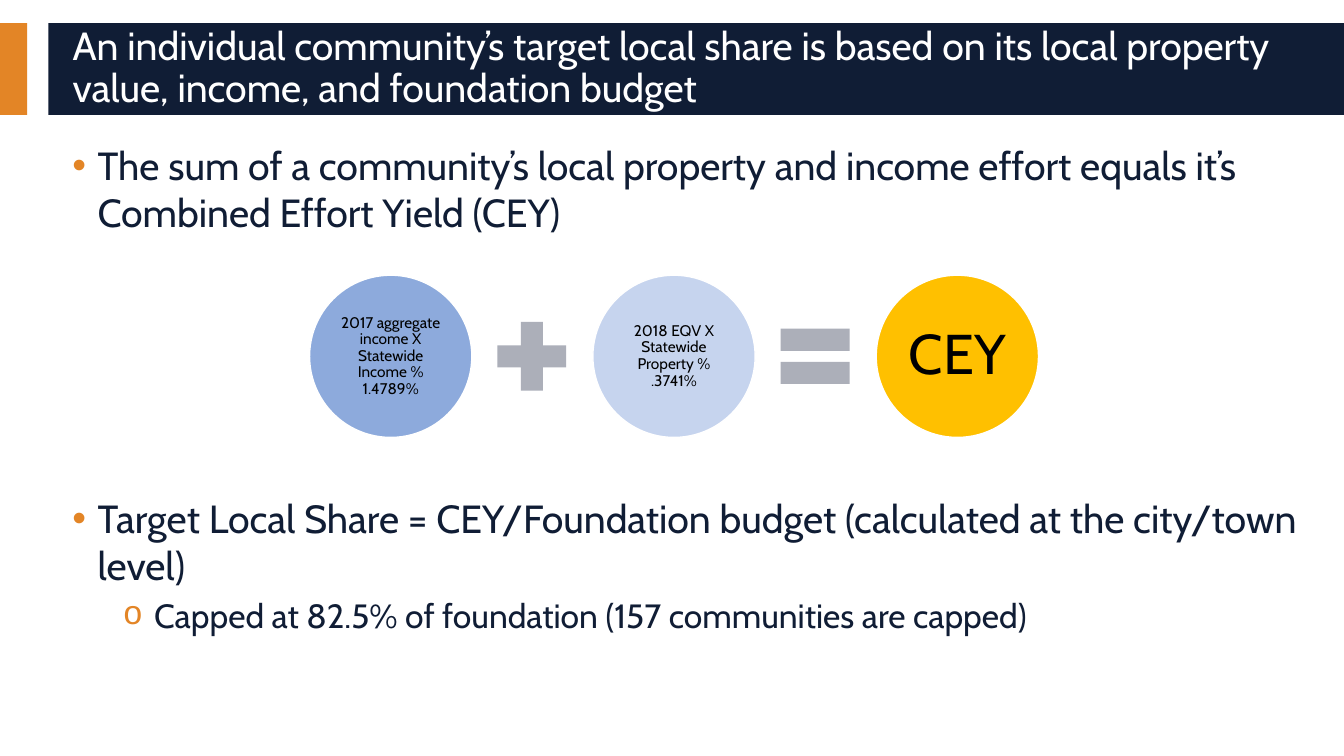
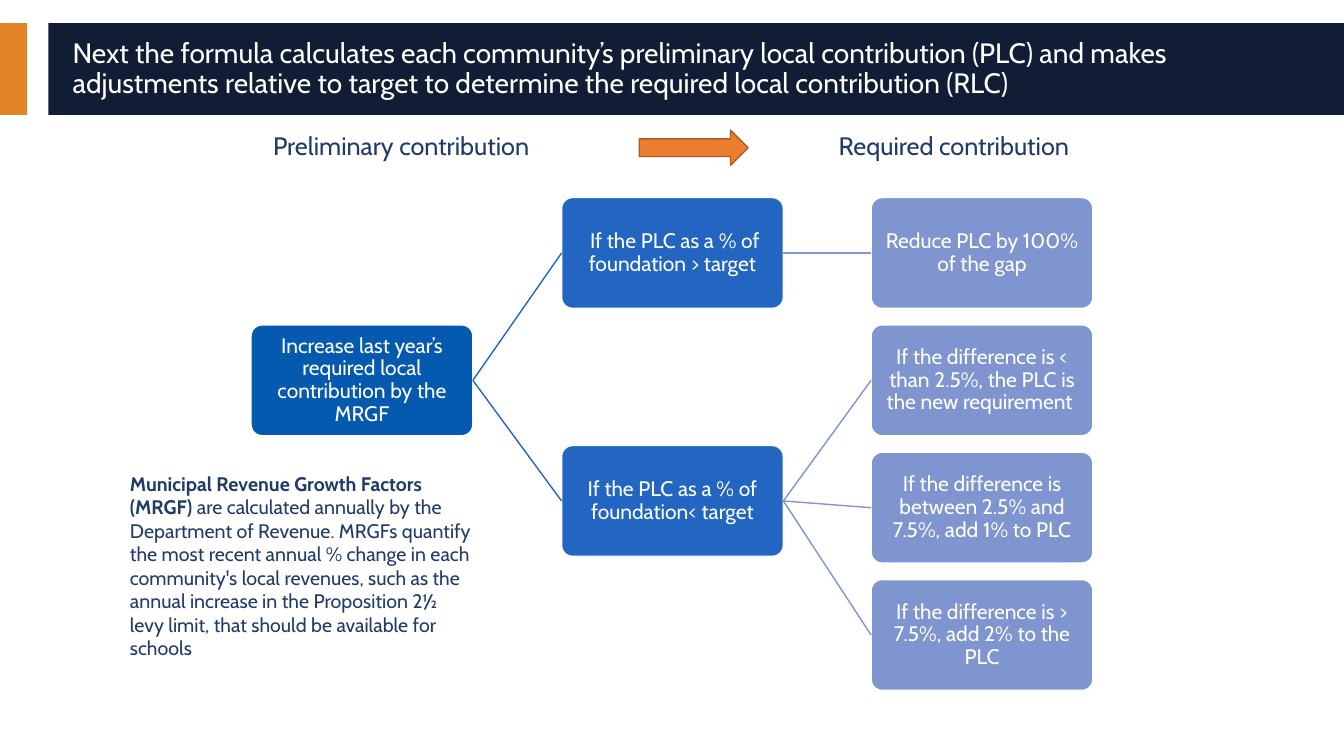
"""Build two slides on target and required local contributions."""
from lxml import etree
from pptx import Presentation
from pptx import util as u
from pptx.dml.color import RGBColor
from pptx.enum import shapes, text
from pptx.oxml import ns

FONT = "Cabin"
NAVY = RGBColor(0x10, 0x1D, 0x35)
ORANGE = RGBColor(0xE3, 0x85, 0x26)
WHITE = RGBColor(0xFF, 0xFF, 0xFF)
BLACK = RGBColor(0x00, 0x00, 0x00)
GRAY = RGBColor(0xAC, 0xAF, 0xB9)
GOLD = RGBColor(0xFF, 0xC0, 0x00)
PERIWINKLE = RGBColor(0x8D, 0xAA, 0xDC)
PALE_BLUE = RGBColor(0xC6, 0xD4, 0xEE)
ROOT_BLUE = RGBColor(0x05, 0x5A, 0xAF)
MIDDLE_BLUE = RGBColor(0x23, 0x66, 0xC2)
LEAF_BLUE = RGBColor(0x7F, 0x95, 0xCF)
TEXT_BLUE = RGBColor(0x20, 0x3B, 0x6A)
ARROW_FILL = RGBColor(0xED, 0x7D, 0x31)
ARROW_LINE = RGBColor(0xAF, 0x5C, 0x24)
MIDDLE = text.MSO_ANCHOR.MIDDLE
CENTER = text.PP_ALIGN.CENTER
KIND = shapes.MSO_SHAPE


def add_shape(slide, kind, box, fill, line=None):
    """Add a flat preset shape with an optional one-point outline."""
    shape = slide.shapes.add_shape(kind, *map(u.Inches, box))
    shape.shadow.inherit = False
    shape.fill.solid()
    shape.fill.fore_color.rgb = fill
    if line is None:
        shape.line.fill.background()
    else:
        shape.line.color.rgb = line
        shape.line.width = u.Pt(1)
    return shape


def write(shape, lines, size, color, align=text.PP_ALIGN.LEFT, anchor=text.MSO_ANCHOR.TOP,
          spacing=1.0, margin=None):
    """Write paragraphs, each a list of run texts, and format them."""
    frame = shape.text_frame
    frame.word_wrap = True
    frame.vertical_anchor = anchor
    if margin is not None:
        frame.margin_left = frame.margin_right = u.Inches(margin)
        frame.margin_top = frame.margin_bottom = u.Inches(margin)
    for number, pieces in enumerate(lines):
        paragraph = frame.add_paragraph() if number else frame.paragraphs[0]
        paragraph.alignment = align
        paragraph.line_spacing = spacing
        for piece in pieces:
            run = paragraph.add_run()
            run.text = piece
            run.font.name = FONT
            run.font.size = u.Pt(size)
            run.font.color.rgb = color
    return frame


presentation = Presentation()
presentation.slide_width = u.Inches(13.33)
presentation.slide_height = u.Inches(7.5)

titles = [
    ("An individual community’s target local share is based on its local property value, "
     "income, and foundation budget", 28),
    ("Next the formula calculates each community’s preliminary local contribution (PLC) and makes "
     "adjustments relative to target to determine the required local contribution (RLC)", 20),
]
slides = []
for title, size in titles:
    slide = presentation.slides.add_slide(presentation.slide_layouts[6])
    add_shape(slide, KIND.RECTANGLE, (0, 0.23, 0.27, 0.91), ORANGE)
    band = add_shape(slide, KIND.RECTANGLE, (0.48, 0.23, 12.85, 0.91), NAVY)
    frame = write(band, [[title]], size, WHITE, anchor=MIDDLE, spacing=0.9)
    frame.margin_left = u.Inches(0.24)
    frame.margin_right = u.Inches(0.37)
    slides.append(slide)
share_slide, contribution_slide = slides

points = [
    ("The sum of a community’s local property and income effort equals it’s "
     "Combined Effort Yield (CEY)", 28, 0, 0.25, 0.25, "•", "Arial"),
    ("Target Local Share = CEY/Foundation budget (calculated at the city/town level)",
     28, 185, 0.25, 0.25, "•", "Arial"),
    ("Capped at 82.5% of foundation (157 communities are capped)",
     24, 5, 0.81, 0.31, "o", "Courier New"),
]
body = share_slide.shapes.add_textbox(*map(u.Inches, (0.62, 1.35, 12.44, 5.52)))
frame = write(body, [[point[0]] for point in points], 28, NAVY)
for paragraph, point in zip(frame.paragraphs, points):
    wording, size, before, margin, hanging, bullet, bullet_font = point
    paragraph.runs[0].font.size = u.Pt(size)
    paragraph.space_before = u.Pt(before)
    properties = paragraph._p.get_or_add_pPr()
    properties.set("marL", str(u.Inches(margin)))
    properties.set("indent", str(-u.Inches(hanging)))
    bullet_color = etree.SubElement(properties, ns.qn("a:buClr"))
    etree.SubElement(bullet_color, ns.qn("a:srgbClr"), val=str(ORANGE))
    etree.SubElement(properties, ns.qn("a:buFont"), typeface=bullet_font)
    etree.SubElement(properties, ns.qn("a:buChar"), char=bullet)

circles = [
    ("2017 aggregate income X Statewide Income % 1.4789%", PERIWINKLE, 11, 0.02, KIND.MATH_PLUS),
    ("2018 EQV X Statewide Property % .3741%", PALE_BLUE, 11, 0.02, KIND.MATH_EQUAL),
    ("CEY", GOLD, 40, 0.06, None),
]
for number, (label, fill, size, margin, operator) in enumerate(circles):
    left = 3.07 + 2.81 * number
    circle = add_shape(share_slide, KIND.OVAL, (left, 2.73, 1.61, 1.61), fill, WHITE)
    write(circle, [[label]], size, BLACK, CENTER, MIDDLE, 0.9, margin)
    if operator is not None:
        add_shape(share_slide, operator, (left + 1.74, 3.07, 0.93, 0.93), GRAY)

column_lefts = [2.49, 5.57, 8.64]
column_fills = [ROOT_BLUE, MIDDLE_BLUE, LEAF_BLUE]
leaf_tops = [1.96 + 3.79 * row / 3 for row in range(4)]
nodes = [
    ("Increase last year’s required local contribution by the MRGF", 0, leaf_tops[1], None),
    (" If the PLC as a % of foundation > target", 1, leaf_tops[0], 0),
    ("If the PLC as a % of foundation< target", 1, 4.42, 0),
    ("Reduce PLC by 100% of the gap", 2, leaf_tops[0], 1),
    ("If the difference is < than 2.5%, the PLC is the new requirement ", 2, leaf_tops[1], 2),
    ("If the difference is between 2.5% and 7.5%, add 1% to PLC", 2, leaf_tops[2], 2),
    ("If the difference is > 7.5%, add 2% to the PLC", 2, leaf_tops[3], 2),
]
boxes = []
for label, column, top, parent in nodes:
    box = add_shape(contribution_slide, KIND.ROUNDED_RECTANGLE,
                    (column_lefts[column], top, 2.2, 1.1), column_fills[column], WHITE)
    box.adjustments[0] = 0.1
    write(box, [[label]], 15, WHITE, CENTER, MIDDLE, 0.9, 0.01)
    boxes.append(box)
    if parent is not None:
        branch = contribution_slide.shapes.add_connector(
            shapes.MSO_CONNECTOR.STRAIGHT, 0, 0, 0, 0)
        branch.begin_connect(boxes[parent], 3)
        branch.end_connect(box, 1)
        branch.line.color.rgb = column_fills[column]
        branch.line.width = u.Pt(1)
        etree.SubElement(branch._element.spPr, ns.qn("a:effectLst"))

definition = contribution_slide.shapes.add_textbox(*map(u.Inches, (1.19, 4.63, 3.58, 1.99)))
frame = write(definition, [[
    "Municipal Revenue Growth Factors (MRGF)",
    " are calculated annually by the Department of Revenue. MRGFs quantify the most recent annual "
    "% change in each community's local revenues, such as the annual increase in the "
    "Proposition 2½ levy limit, that should be available for schools",
]], 14, TEXT_BLUE)
frame.paragraphs[0].runs[0].font.bold = True

for heading, left in [("Preliminary contribution", 2.61), ("Required contribution", 8.22)]:
    heading_box = contribution_slide.shapes.add_textbox(*map(u.Inches, (left, 1.24, 2.83, 0.4)))
    write(heading_box, [[heading]], 18, TEXT_BLUE)
add_shape(contribution_slide, KIND.RIGHT_ARROW, (6.34, 1.29, 1.08, 0.35), ARROW_FILL, ARROW_LINE)

presentation.save("out.pptx")
